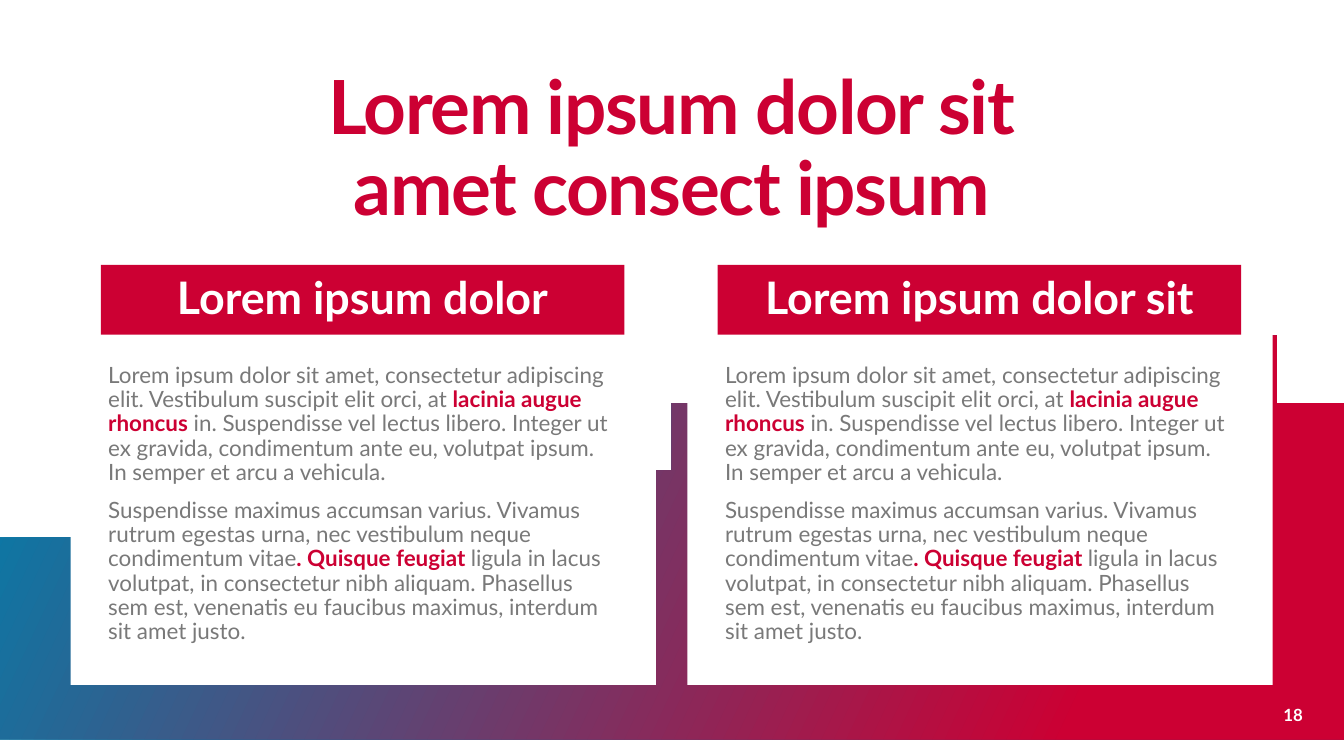
from pptx import Presentation
from pptx.dml.color import RGBColor
from pptx.enum.shapes import MSO_SHAPE as Preset
from pptx.enum.text import MSO_ANCHOR as Anchor, MSO_AUTO_SIZE as AutoSize, PP_ALIGN as Align
from pptx.oxml.xmlchemy import OxmlElement
from pptx.util import Inches, Pt

RED, BLUE, GREY, WHITE = "CC0033", "007FAC", "797979", "FFFFFF"
WIDTH, HEIGHT = 20, 11.25
COLUMN_WIDTH = 7.79

# Each paragraph is a list of (text, is accented).
BODY = [
    [("Lorem ipsum dolor sit amet, consectetur adipiscing elit. "
      "Vestibulum suscipit elit orci, at ", False),
     ("lacinia augue rhoncus", True),
     (" in. Suspendisse vel lectus libero. Integer ut ex gravida, condimentum "
      "ante eu, volutpat ipsum. In semper et arcu a vehicula.", False)],
    [("Suspendisse maximus accumsan varius. Vivamus rutrum egestas urna, "
      "nec vestibulum neque condimentum vitae", False),
     (". Quisque feugiat ", True),
     ("ligula in lacus volutpat, in consectetur nibh aliquam. Phasellus sem est, "
      "venenatis eu faucibus maximus, interdum sit amet justo.", False)],
]
COLUMNS = [(1.5, "Lorem ipsum dolor"), (10.68, "Lorem ipsum dolor sit")]


def color(value):
    return RGBColor.from_string(value)


def bezier(start, control1, control2, end, steps=60):
    """Return points along a cubic curve, without its start."""
    points = []
    for step in range(1, steps + 1):
        t = step / steps
        weights = ((1 - t) ** 3, 3 * t * (1 - t) ** 2, 3 * t * t * (1 - t), t ** 3)
        corners = (start, control1, control2, end)
        points.append(tuple(sum(w * corner[axis] for w, corner in zip(weights, corners))
                            for axis in (0, 1)))
    return points


class SlideBuilder:
    font = "Lato"

    def __init__(self, page):
        self.page = page

    def style(self, paragraph, size, text_color, bold=False, align=Align.LEFT,
              line_spacing=0.9, space_before=0):
        paragraph.alignment = align
        paragraph.line_spacing = line_spacing
        paragraph.space_before = Pt(space_before)
        font = paragraph.font
        font.name, font.size, font.bold = self.font, Pt(size), bold
        font.color.rgb = color(text_color)

    def frame(self, box, anchor, inset_x=0, inset_y=0):
        frame = box.text_frame
        frame.word_wrap = True
        frame.auto_size = AutoSize.NONE
        frame.vertical_anchor = anchor
        frame.margin_left = frame.margin_right = Inches(inset_x)
        frame.margin_top = frame.margin_bottom = Inches(inset_y)
        return frame

    def placeholder(self, index, left, top, width, height):
        """Move a placeholder into place and in front of what is drawn so far."""
        box = self.page.placeholders[index]
        box.left, box.top = Inches(left), Inches(top)
        box.width, box.height = Inches(width), Inches(height)
        self.page.shapes._spTree.append(box._element)
        return box

    def wave(self):
        points = [(0, HEIGHT)]
        points += bezier((0, 11.25), (0, 9.64), (0.01, 9.59), (0.01, 7.98))
        points += bezier((0.01, 7.98), (10.01, 7.98), (10, 4.58), (20, 5.62))
        points.append((WIDTH, HEIGHT))
        builder = self.page.shapes.build_freeform(*points[0], scale=Inches(1))
        builder.add_line_segments(points[1:], close=True)
        shape = builder.convert_to_shape()
        shape.shadow.inherit = False
        shape.line.fill.background()
        shape.fill.gradient()
        shape.fill.gradient_angle = 335
        for stop, value, position in zip(shape.fill.gradient_stops, (BLUE, RED), (0, 0.82)):
            stop.color.rgb = color(value)
            stop.position = position

    def panel(self, left, top, width, height):
        shape = self.page.shapes.add_shape(
            Preset.RECTANGLE, Inches(left), Inches(top), Inches(width), Inches(height))
        shape.shadow.inherit = False
        shape.fill.solid()
        shape.fill.fore_color.rgb = color(WHITE)
        shape.line.fill.background()

    def title(self, text):
        box = self.placeholder(0, 1.02, 1.04, 17.95, 2.04)
        paragraph = self.frame(box, Anchor.TOP).paragraphs[0]
        paragraph.text = text
        self.style(paragraph, 80, RED, True, Align.CENTER)
        paragraph.font._element.set("spc", "-150")

    def heading(self, index, left, text):
        box = self.placeholder(index, left, 3.94, COLUMN_WIDTH, 1.04)
        box.fill.solid()
        box.fill.fore_color.rgb = color(RED)
        paragraph = self.frame(box, Anchor.MIDDLE, 0.1, 0.2).paragraphs[0]
        paragraph.text = text
        self.style(paragraph, 48, WHITE, True, Align.CENTER, space_before=15)

    def body(self, index, left, paragraphs):
        box = self.placeholder(index, left, 5.37, COLUMN_WIDTH, 4.35)
        frame = self.frame(box, Anchor.TOP, 0.1, 0.05)
        for number, spans in enumerate(paragraphs):
            paragraph = frame.add_paragraph() if number else frame.paragraphs[0]
            self.style(paragraph, 24, GREY, space_before=15)
            self.remove_bullet(paragraph)
            for text, accented in spans:
                span = paragraph.add_run()
                span.text = text
                if accented:
                    span.font.bold = True
                    span.font.color.rgb = color(RED)

    def remove_bullet(self, paragraph):
        properties = paragraph._p.get_or_add_pPr()
        properties.set("marL", str(Inches(0.01)))
        properties.set("indent", "0")
        properties.insert_element_before(OxmlElement("a:buNone"), "a:defRPr")

    def page_number(self, text):
        box = self.page.shapes.add_textbox(
            Inches(18.26), Inches(10.12), Inches(1.13), Inches(0.66))
        paragraph = self.frame(box, Anchor.BOTTOM).paragraphs[0]
        paragraph.text = text
        self.style(paragraph, 18, WHITE, True, Align.RIGHT, line_spacing=1.0)


def main():
    deck = Presentation()
    deck.slide_width, deck.slide_height = Inches(WIDTH), Inches(HEIGHT)
    comparison = deck.slide_layouts.get_by_name("Comparison")
    builder = SlideBuilder(deck.slides.add_slide(comparison))

    builder.wave()
    builder.page_number("18")
    for left, _ in COLUMNS:
        builder.panel(left - 0.45, 3.54, 8.71, 6.65)
    builder.title("Lorem ipsum dolor sit\namet consect ipsum")
    for number, (left, heading) in enumerate(COLUMNS):
        builder.heading(2 * number + 1, left, heading)
        builder.body(2 * number + 2, left, BODY)

    deck.save("out.pptx")


if __name__ == "__main__":
    main()
